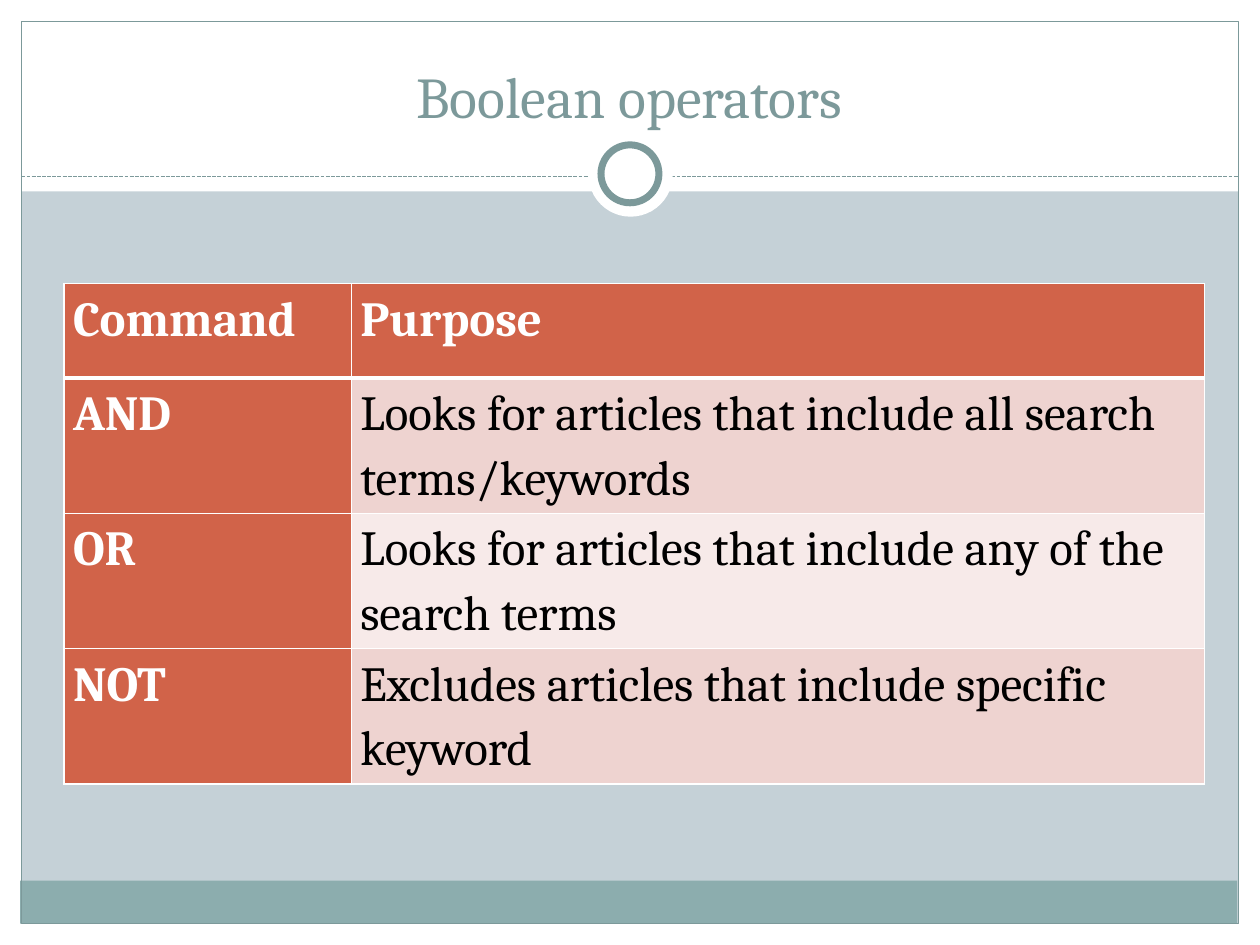
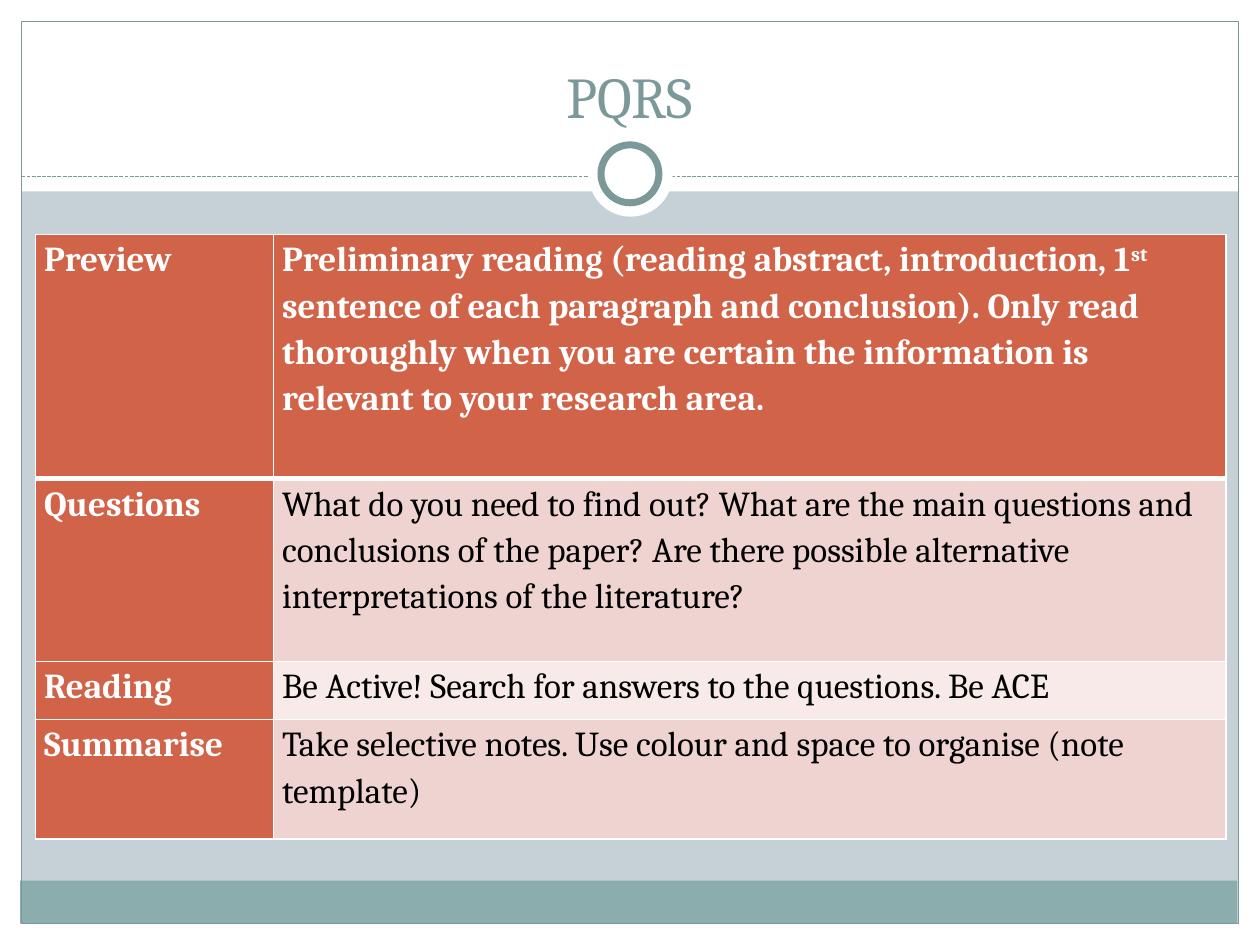
from dataclasses import dataclass

from lxml import etree
from pptx import Presentation
from pptx import util as u
from pptx.dml.color import RGBColor
from pptx.enum import dml, shapes, text
from pptx.oxml.ns import qn


@dataclass(frozen=True)
class Theme:
    font: str = "Cambria"
    back: str = "C5D1D7"
    band: str = "8CADAE"
    edge: str = "7C999A"
    head: str = "D16349"
    odd: str = "EED3D0"
    even: str = "F7EAE9"
    white: str = "FFFFFF"
    black: str = "000000"
    title: int = 33


look = Theme()
rgb = RGBColor.from_string
rect, oval = shapes.MSO_SHAPE.RECTANGLE, shapes.MSO_SHAPE.OVAL

# kind, box, fill, line width
frame = [
    (rect, (0, 7.33, 10, 0.17), look.white, 0),
    (rect, (0, 0, 10, 1.52), look.white, 0),
    (rect, (0, 0, 0.17, 7.5), look.white, 0),
    (rect, (9.83, 0, 0.17, 7.5), look.white, 0),
    (rect, (0.16, 6.99, 9.66, 0.34), look.band, 0),
    (rect, (0.17, 0.17, 9.66, 7.16), None, 0.75),
]
rings = [
    (oval, (4.67, 1.05, 0.67, 0.67), look.white, 0),
    (oval, (4.77, 1.15, 0.46, 0.46), look.white, 4),
]

# Text between carets is superscript.
pages = [
    dict(title="Boolean operators", left=0.51, top=2.25, size=28,
         cols=(2.28, 6.77), tall=(0.75, 1.03, 1.03, 1.03),
         rows=[
             ("Command", "Purpose"),
             ("AND", "Looks for articles that include all search terms/keywords"),
             ("OR", "Looks for articles that include any of the search terms"),
             ("NOT", "Excludes articles that include specific keyword"),
         ]),
    dict(title="PQRS", left=0.28, top=1.86, size=20,
         cols=(1.89, 7.56), tall=(1.94, 1.45, 0.46, 0.95),
         rows=[
             ("Preview", "Preliminary reading (reading abstract, introduction, 1^st^ "
              "sentence of each paragraph and conclusion). Only read thoroughly "
              "when you are certain the information is relevant to your research area."),
             ("Questions", "What do you need to find out? What are the main questions "
              "and conclusions of the paper? Are there possible alternative "
              "interpretations of the literature?"),
             ("Reading", "Be Active! Search for answers to the questions. Be ACE"),
             ("Summarise", "Take selective notes. Use colour and space to organise "
              "(note template)"),
         ]),
]


def write(box, words, size, color, bold=False, align=text.PP_ALIGN.LEFT, space=1.0):
    """Fill a text frame with one paragraph, raising the parts between carets."""
    box.word_wrap = True
    para = box.paragraphs[0]
    para.alignment, para.line_spacing = align, space
    for i, part in enumerate(words.split("^")):
        run = para.add_run()
        run.text = part
        font = run.font
        font.name, font.size, font.bold = look.font, u.Pt(size), bold
        font.color.rgb = rgb(color)
        if i % 2:
            font._element.set("baseline", "30000")


def draw(slide, parts):
    for kind, box, fill, width in parts:
        shape = slide.shapes.add_shape(kind, *map(u.Inches, box))
        shape.shadow.inherit = False
        if fill:
            shape.fill.solid()
            shape.fill.fore_color.rgb = rgb(fill)
        else:
            shape.fill.background()
        if width:
            shape.line.color.rgb = rgb(look.edge)
            shape.line.width = u.Pt(width)
        else:
            shape.line.fill.background()


deck = Presentation()
deck.slide_width, deck.slide_height = u.Inches(10), u.Inches(7.5)

for page in pages:
    slide = deck.slides.add_slide(deck.slide_layouts[6])
    slide.background.fill.solid()
    slide.background.fill.fore_color.rgb = rgb(look.back)

    draw(slide, frame)
    rule = slide.shapes.add_connector(
        shapes.MSO_CONNECTOR.STRAIGHT,
        u.Inches(0.17), u.Inches(1.4), u.Inches(9.83), u.Inches(1.4))
    rule.line.color.rgb = rgb(look.edge)
    rule.line.width = u.Pt(0.75)
    rule.line.dash_style = dml.MSO_LINE.SQUARE_DOT
    etree.SubElement(rule._element.spPr, qn("a:effectLst"))
    draw(slide, rings)

    title = slide.shapes.add_textbox(*map(u.Inches, (0.33, 0.25, 9.33, 0.83))).text_frame
    title.vertical_anchor = text.MSO_ANCHOR.BOTTOM
    write(title, page["title"], look.title, look.edge, align=text.PP_ALIGN.CENTER)

    cols, tall, rows = page["cols"], page["tall"], page["rows"]
    table = slide.shapes.add_table(
        len(rows), len(cols), u.Inches(page["left"]), u.Inches(page["top"]),
        u.Inches(sum(cols)), u.Inches(sum(tall))).table
    for col, wide in zip(table.columns, cols):
        col.width = u.Inches(wide)
    for row, high in zip(table.rows, tall):
        row.height = u.Inches(high)

    for r, row in enumerate(rows):
        for c, words in enumerate(row):
            cell = table.cell(r, c)
            key = r == 0 or c == 0
            cell.margin_left = cell.margin_right = u.Inches(0.07)
            cell.margin_top = cell.margin_bottom = 0
            write(cell.text_frame, words, page["size"],
                  look.white if key else look.black, bold=key, space=1.15)
            # The line under the top row is the heavy one.
            for side in "LRTB":
                heavy = (r, side) in ((0, "B"), (1, "T"))
                line = etree.SubElement(cell._tc.get_or_add_tcPr(), qn("a:ln" + side),
                                        w=str(u.Pt(3 if heavy else 1)))
                fill = etree.SubElement(line, qn("a:solidFill"))
                etree.SubElement(fill, qn("a:srgbClr"), val=look.white)
            cell.fill.solid()
            cell.fill.fore_color.rgb = rgb(
                look.head if key else look.odd if r % 2 else look.even)

deck.save("out.pptx")
